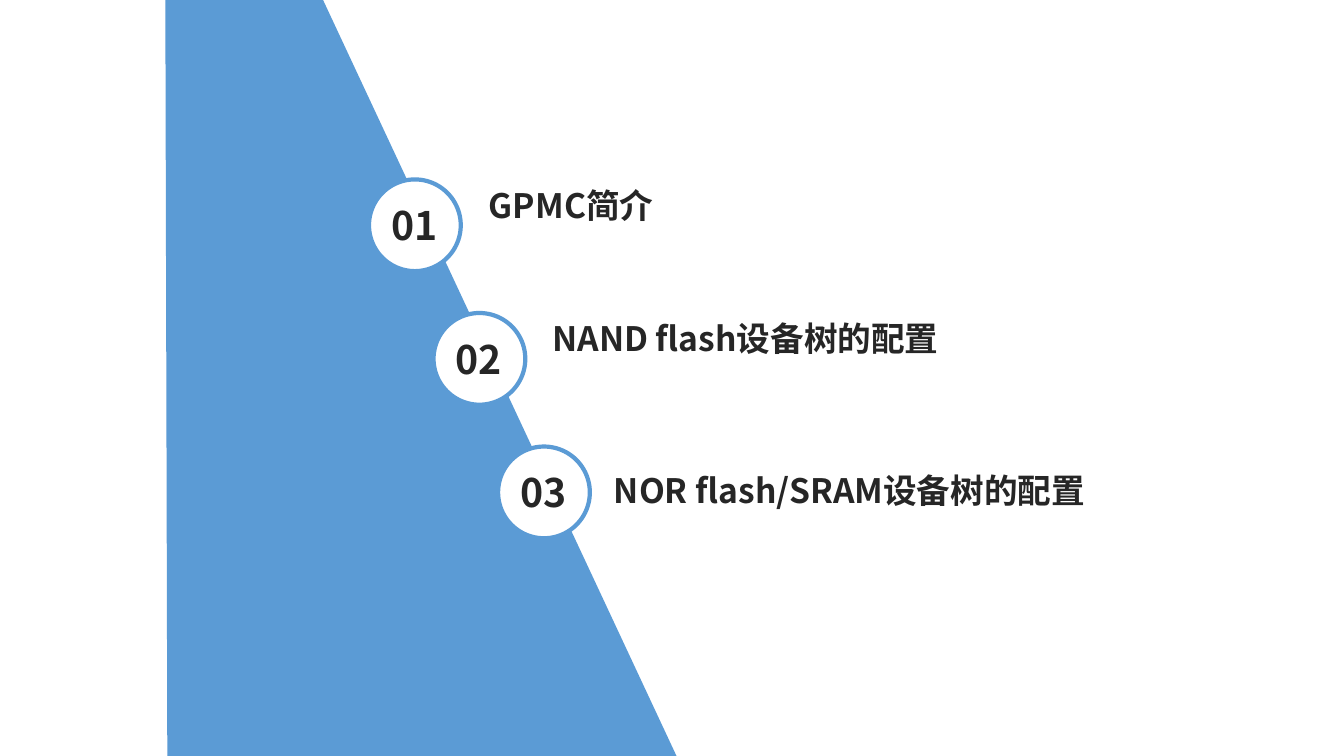
import pptx
import pptx.dml.color
import pptx.enum.shapes
import pptx.enum.text
import pptx.oxml
import pptx.oxml.ns
import pptx.util
from pptx.util import Inches

BLUE = pptx.dml.color.RGBColor(0x5B, 0x9B, 0xD5)
WHITE = pptx.dml.color.RGBColor(0xFF, 0xFF, 0xFF)
DARK = pptx.dml.color.RGBColor(0x26, 0x26, 0x26)
LEFT = pptx.enum.text.PP_ALIGN.LEFT
CENTER = pptx.enum.text.PP_ALIGN.CENTER

PANEL_POINTS = [(6.71, 7.5), (3.2, -0.01), (1.64, -0.01), (1.66, 7.54)]
TOPICS = [
    ("GPMC简介", 4.75, 1.79, 6.11),
    ("NAND flash设备树的配置", 5.38, 3.1, 5.47),
    ("NOR flash/SRAM设备树的配置", 5.99, 4.61, 5.47),
]
BADGE_LEFT, BADGE_TOP, BADGE_SIZE = 3.66, 1.78, 0.91
STEP_X, STEP_Y = 0.64, 1.325


class AgendaSlide:
    font_name = "Noto Sans CJK SC"

    def __init__(self, presentation):
        self.slide = presentation.slides.add_slide(presentation.slide_layouts[6])

    def panel(self, points, color):
        corners = [(Inches(x), Inches(y)) for x, y in points]
        builder = self.slide.shapes.build_freeform(*corners[0], scale=1.0)
        builder.add_line_segments(corners[1:], close=True)
        shape = builder.convert_to_shape()
        shape.shadow.inherit = False
        shape.fill.solid()
        shape.fill.fore_color.rgb = color
        shape.line.fill.background()

    def text(self, shapes, content, left, top, width, height, size, alignment=LEFT):
        box = shapes.add_textbox(Inches(left), Inches(top), Inches(width), Inches(height))
        frame = box.text_frame
        frame.word_wrap = True
        frame.auto_size = pptx.enum.text.MSO_AUTO_SIZE.SHAPE_TO_FIT_TEXT
        paragraph = frame.paragraphs[0]
        paragraph.alignment = alignment
        run = paragraph.add_run()
        run.text = content
        run.font.size = pptx.util.Pt(size)
        run.font.bold = True
        run.font.color.rgb = DARK
        run.font.name = self.font_name
        east_asian = pptx.oxml.parse_xml(
            f'<a:ea {pptx.oxml.ns.nsdecls("a")} typeface="{self.font_name}"/>'
        )
        run.font.fill._xPr.append(east_asian)

    def badge(self, number, left, top):
        group = self.slide.shapes.add_group_shape()
        circle = group.shapes.add_shape(
            pptx.enum.shapes.MSO_SHAPE.OVAL,
            Inches(left), Inches(top), Inches(BADGE_SIZE), Inches(BADGE_SIZE),
        )
        circle.shadow.inherit = False
        circle.fill.solid()
        circle.fill.fore_color.rgb = WHITE
        circle.line.color.rgb = BLUE
        circle.line.width = pptx.util.Pt(3)
        self.text(group.shapes, f"{number:02d}", left + 0.08, top + 0.17, 0.74, 0.6, 28, CENTER)

    def topic(self, title, left, top, width):
        self.text(self.slide.shapes, title, left, top, width, 0.5, 24)


def main():
    presentation = pptx.Presentation()
    presentation.slide_width = Inches(13.33)
    presentation.slide_height = Inches(7.5)
    agenda = AgendaSlide(presentation)
    agenda.panel(PANEL_POINTS, BLUE)
    for index, topic in enumerate(TOPICS):
        agenda.badge(index + 1, BADGE_LEFT + index * STEP_X, BADGE_TOP + index * STEP_Y)
        agenda.topic(*topic)
    presentation.save("out.pptx")


if __name__ == "__main__":
    main()
